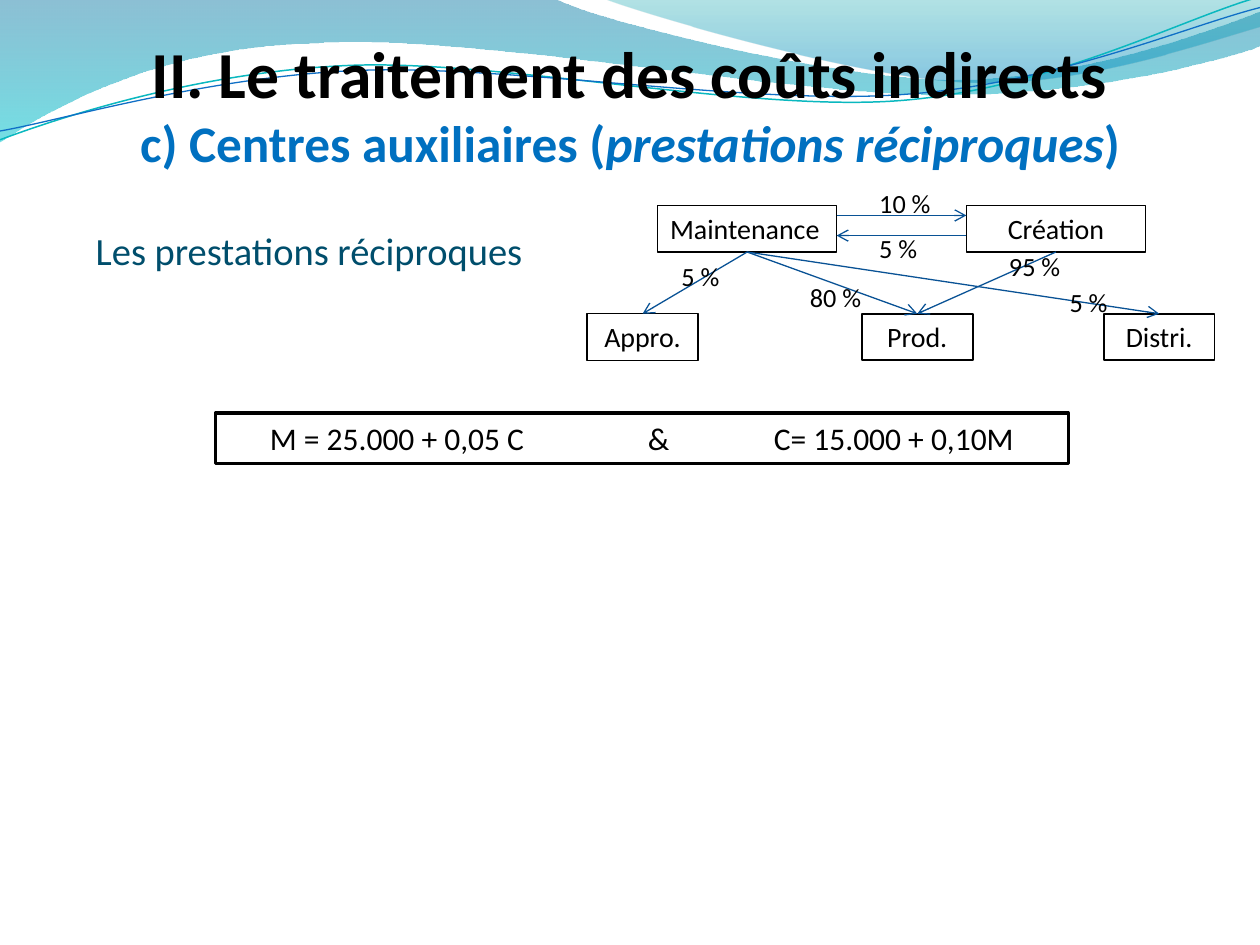
from lxml.etree import SubElement
from pptx import Presentation
from pptx.dml.color import RGBColor
from pptx.enum.shapes import MSO_CONNECTOR, MSO_SHAPE
from pptx.enum.text import MSO_ANCHOR, MSO_AUTO_SIZE, PP_ALIGN
from pptx.oxml.ns import qn
from pptx.util import Inches, Pt

BLACK = RGBColor(0x00, 0x00, 0x00)
WHITE = RGBColor(0xFF, 0xFF, 0xFF)
BLUE = RGBColor(0x00, 0x70, 0xC0)
NAVY = RGBColor(0x00, 0x4E, 0x6C)
ARROW = RGBColor(0x09, 0x52, 0x95)
FONT = "Calibri"

# Waves: a start point, then lines (2 numbers) and curves (6 numbers), in inches.
# Gradient stops: position, colour, opacity in percent.
FILLED_WAVES = [
    ([(0, 0), (4.4, -0.01), (4.76, 0.17, 6.64, 0.63, 7.58, 0.63),
      (8.53, 0.63, 9.58, 0.26, 10, 0.09), (10.01, 0.36),
      (9.83, 0.44, 8.7, 0.76, 7.46, 0.75), (6.22, 0.75, 3.82, 0.28, 2.57, 0.34),
      (1.29, 0.36, 0.46, 0.83, -0.01, 1.13), (0, 0)],
     [(0, RGBColor(0x00, 0x74, 0xA1), 45), (1, RGBColor(0x00, 0xC6, 0xCF), 55)]),
    ([(4.79, -0.01), (5.09, 0.11, 6.82, 0.62, 7.69, 0.65),
      (8.56, 0.69, 9.61, 0.32, 10, 0.21), (10, 0), (4.79, -0.01)],
     [(0, RGBColor(0x00, 0xA1, 0xA9), 30), (0.8, RGBColor(0x00, 0x8B, 0xBF), 45)]),
]
LINE_WAVES = [
    ([(0, 1.11), (0.48, 0.93, 1.58, 0.57, 2.77, 0.52),
      (3.95, 0.47, 5.93, 0.89, 7.13, 0.8), (8.33, 0.71, 9.38, 0.15, 9.98, -0.02)],
     RGBColor(0x0A, 0xB8, 0xBF), 0.85),
    ([(0, 1.04), (0.47, 0.96, 1.64, 0.61, 2.83, 0.56),
      (4.03, 0.51, 5.97, 0.84, 7.17, 0.75), (8.36, 0.67, 9.41, 0.21, 10, 0.06)],
     RGBColor(0x0F, 0x6F, 0xC6), 0.75),
]


def apply(target, formats):
    for name, value in formats.items():
        setattr(target, name, value)


def place(page, shape, box):
    """Set the box of a placeholder and bring it to the front."""
    apply(shape, dict(zip(("left", "top", "width", "height"), map(Inches, box))))
    page.shapes._spTree.append(shape._element)
    apply(shape.text_frame, {"auto_size": MSO_AUTO_SIZE.NONE,
                             "vertical_anchor": MSO_ANCHOR.TOP})


def add_span(para, text, size, color, **formats):
    span = para.add_run()
    span.text = text
    apply(span.font, {"name": FONT, "size": Pt(size), **formats})
    span.font.color.rgb = color


def add_wave(page, segments, close):
    """Draw every point with lines, then merge each curve's three lines into one."""
    points = [(Inches(segment[i]), Inches(segment[i + 1]))
              for segment in segments for i in range(0, len(segment), 2)]
    builder = page.shapes.build_freeform(*points[0])
    builder.add_line_segments(points[1:], close=close)
    wave = builder.convert_to_shape()
    wave.shadow.inherit = False
    lines = iter(list(wave._element.spPr.iter(qn("a:lnTo"))))
    for segment in segments[1:]:
        first = next(lines)
        if len(segment) == 6:
            first.tag = qn("a:cubicBezTo")
            for line in (next(lines), next(lines)):
                first.append(line[0])
                line.getparent().remove(line)
    return wave


def add_waves(page):
    for segments, stops in FILLED_WAVES:
        wave = add_wave(page, segments, True)
        wave.line.fill.background()
        wave.fill.gradient()
        wave.fill.gradient_angle = 270
        for stop, (position, color, _) in zip(wave.fill.gradient_stops, stops):
            stop.position = position
            stop.color.rgb = color
        colors = wave._element.spPr.iter(qn("a:srgbClr"))
        for node, (_, _, opacity) in zip(colors, stops):
            SubElement(node, qn("a:alpha"), val=str(opacity * 1000))
    for segments, color, width in LINE_WAVES:
        wave = add_wave(page, segments, False)
        wave.fill.background()
        wave.line.color.rgb = color
        wave.line.width = Pt(width)


def add_title(page, box):
    title = page.shapes.title
    place(page, title, box)
    frame = title.text_frame
    heading, subheading = frame.paragraphs[0], frame.add_paragraph()
    add_span(heading, "II. Le traitement des coûts indirects", 37.5, BLACK, bold=True)
    for text, italic in (("c) Centres auxiliaires (", False),
                         ("prestations réciproques", True), (")", False)):
        add_span(subheading, text, 29.3, BLUE, bold=True, italic=italic)
    for para in frame.paragraphs:
        para.alignment = PP_ALIGN.CENTER


def add_body(page, box):
    body = page.placeholders[1]
    place(page, body, box)
    para = body.text_frame.paragraphs[0]
    para.alignment = PP_ALIGN.JUSTIFY
    properties = para._p.get_or_add_pPr()
    properties.set("marL", "0")
    properties.set("indent", "0")
    SubElement(properties, qn("a:buNone"))
    add_span(para, "Les prestations réciproques", 22, NAVY)


def add_box(page, text, box, size=16, width=0.75, align=PP_ALIGN.CENTER, fill=WHITE):
    shape = page.shapes.add_shape(MSO_SHAPE.RECTANGLE, *map(Inches, box))
    shape.shadow.inherit = False
    if fill is None:
        shape.fill.background()
    else:
        shape.fill.solid()
        shape.fill.fore_color.rgb = fill
    shape.line.color.rgb = BLACK
    shape.line.width = Pt(width)
    shape.text_frame.vertical_anchor = MSO_ANCHOR.TOP
    para = shape.text_frame.paragraphs[0]
    para.alignment = align
    add_span(para, text, size, BLACK)
    return shape


def add_equations(page, box):
    shape = add_box(page, "M = 25.000 + 0,05 C \t& \tC= 15.000 + 0,10M", box, size=18, width=2)
    properties = shape.text_frame.paragraphs[0]._p.get_or_add_pPr()
    tabs = SubElement(properties, qn("a:tabLst"))
    for position in (3, 4):
        SubElement(tabs, qn("a:tab"), pos=str(Inches(position)), algn="l")


def add_arrow(page, start=(0, 0), end=(0, 0)):
    arrow = page.shapes.add_connector(MSO_CONNECTOR.STRAIGHT, *map(Inches, start + end))
    arrow.line.color.rgb = ARROW
    arrow.line.width = Pt(0.75)
    SubElement(arrow.line._get_or_add_ln(), qn("a:tailEnd"), type="arrow")
    SubElement(arrow._element.spPr, qn("a:effectLst"))
    return arrow


def add_label(page, text, left, top):
    label = page.shapes.add_textbox(*map(Inches, (left, top, 0.63, 0.35)))
    label.text_frame.word_wrap = True
    add_span(label.text_frame.paragraphs[0], text, 15, BLACK)


def add_diagram(page, left, top):
    height, gap = 0.37, 0.86
    # Auxiliary centres
    upkeep = add_box(page, "Maintenance", (left + 0.56, top, 1.42, height), align=PP_ALIGN.LEFT)
    design = add_box(page, "Création", (left + 3.01, top, 1.42, height))
    # Main centres
    supply, production, sales = [
        add_box(page, text, (left + offset, top + gap, 0.88, height), width=width, fill=None)
        for text, offset, width in (("Appro.", 0, 0.75), ("Prod.", 2.18, 1), ("Distri.", 4.1, 1))]
    # Exchanges between the auxiliary centres
    near, far = left + 1.98, left + 3.01
    add_arrow(page, (near, top + 0.08), (far, top + 0.08))
    add_arrow(page, (far, top + 0.24), (near, top + 0.24))
    # Services to the main centres
    for source, target in ((upkeep, supply), (upkeep, sales),
                           (upkeep, production), (design, production)):
        arrow = add_arrow(page)
        arrow.begin_connect(source, 2)
        arrow.end_connect(target, 0)
    # Shares
    for text, x, y in (("10 %", 2.22, -0.19), ("5 %", 2.22, 0.16), ("5 %", 0.65, 0.39),
                       ("80 %", 1.67, 0.55), ("5 %", 3.73, 0.59), ("95 %", 3.25, 0.31)):
        add_label(page, text, left + x, top + y)


def main():
    deck = Presentation()
    apply(deck, {"slide_width": Inches(10), "slide_height": Inches(7.5)})
    page = deck.slides.add_slide(deck.slide_layouts[1])
    add_waves(page)
    add_body(page, (0.66, 1.75, 9, 0.5))
    add_diagram(page, 4.66, 1.63)
    add_title(page, (0.5, 0.21, 9, 1.01))
    add_equations(page, (1.71, 3.28, 6.77, 0.4))
    deck.save("out.pptx")


if __name__ == "__main__":
    main()
